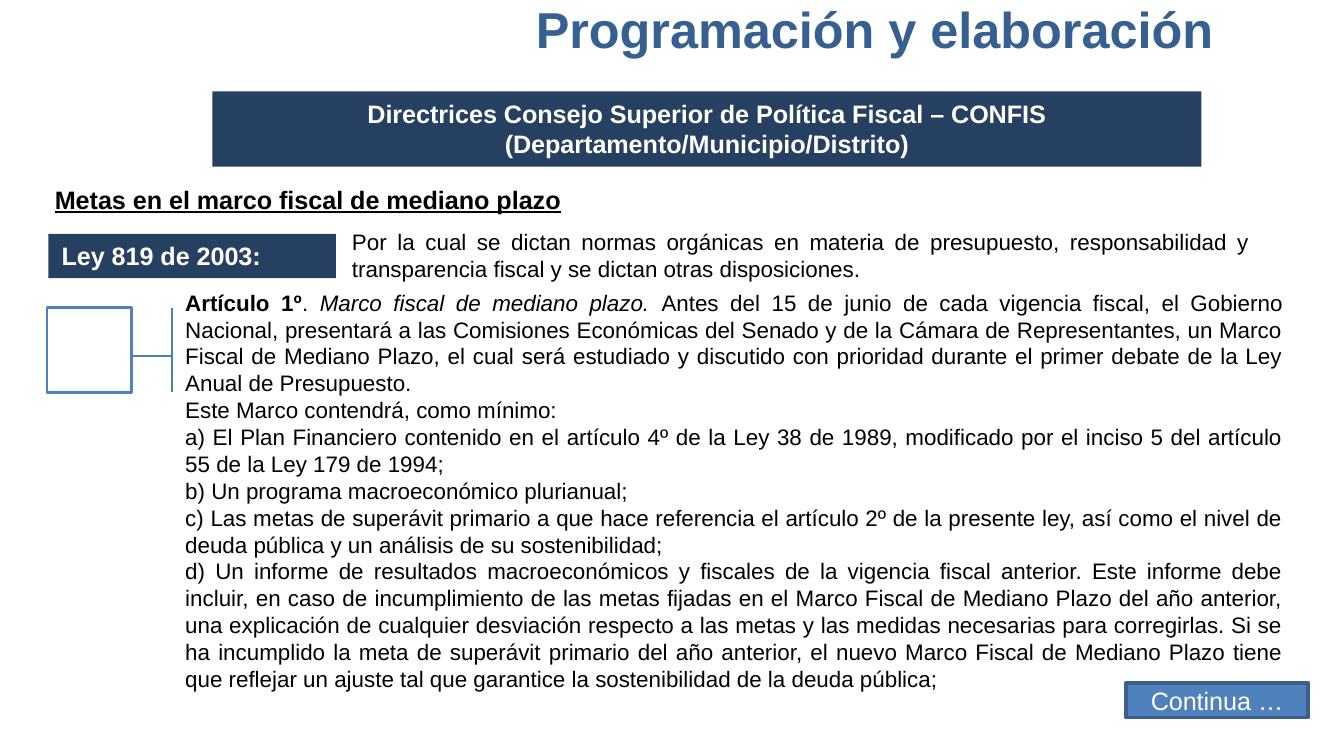
import pptx
import pptx.dml.color
import pptx.enum.shapes
import pptx.enum.text
import pptx.util
from lxml import etree

COLUMNS, ROWS = 100, 56.25
CELLS_PER_INCH = 10
FONT = "Arial"
NAVY, BLUE, WHITE, BLACK = "254061", "4F81BD", "FFFFFF", "000000"
HEADING_SIZE, BODY_SIZE = 13.5, 12
ALIGN = pptx.enum.text.PP_ALIGN
ANCHOR = pptx.enum.text.MSO_ANCHOR
FIT = pptx.enum.text.MSO_AUTO_SIZE

ARTICLE_OPENING = [
    ("Artículo 1º", {"bold": True}),
    (". ", {}),
    ("Marco fiscal de mediano plazo. ", {"italic": True}),
    ("Antes del 15 de junio de cada vigencia fiscal, el Gobierno Nacional, presentará a las "
     "Comisiones Económicas del Senado y de la Cámara de Representantes, un Marco Fiscal de "
     "Mediano Plazo, el cual será estudiado y discutido con prioridad durante el primer debate "
     "de la Ley Anual de Presupuesto.", {}),
]
ARTICLE_CONTENTS = [
    "Este Marco contendrá, como mínimo:",
    "a) El Plan Financiero contenido en el artículo 4º de la Ley 38 de 1989, modificado por el "
    "inciso 5 del artículo 55 de la Ley 179 de 1994;",
    "b) Un programa macroeconómico plurianual;",
    "c) Las metas de superávit primario a que hace referencia el artículo 2º de la presente ley, "
    "así como el nivel de deuda pública y un análisis de su sostenibilidad;",
    "d) Un informe de resultados macroeconómicos y fiscales de la vigencia fiscal anterior. Este "
    "informe debe incluir, en caso de incumplimiento de las metas fijadas en el Marco Fiscal de "
    "Mediano Plazo del año anterior, una explicación de cualquier desviación respecto a las metas "
    "y las medidas necesarias para corregirlas. Si se ha incumplido la meta de superávit primario "
    "del año anterior, el nuevo Marco Fiscal de Mediano Plazo tiene que reflejar un ajuste tal que "
    "garantice la sostenibilidad de la deuda pública;",
]


def cells(*counts):
    """Turn counts of grid cells into lengths."""
    return [pptx.util.Inches(count / CELLS_PER_INCH) for count in counts]


def color(value):
    """Turn a hex string into a colour."""
    return pptx.dml.color.RGBColor.from_string(value)


def format_text(box, size, ink, align, bold=False, underline=False, anchor=ANCHOR.TOP, fit=FIT.NONE):
    """Format every paragraph and run of a box."""
    frame = box.text_frame
    frame.word_wrap = True
    frame.auto_size = fit
    frame.vertical_anchor = anchor
    for para in frame.paragraphs:
        para.alignment = align
        for span in para.runs:
            span.font.name = FONT
            span.font.size = pptx.util.Pt(size)
            span.font.color.rgb = color(ink)
            span.font.bold = bold
            span.font.underline = underline


def add_text(page, place, text, size, align, **style):
    """Add a black text box that grows with its text."""
    box = page.shapes.add_textbox(*cells(*place))
    box.text_frame.text = text
    format_text(box, size, BLACK, align, fit=FIT.SHAPE_TO_FIT_TEXT, **style)


def add_panel(page, place, fill=None, line=None, weight=0):
    """Add a flat rectangle with an optional fill and outline."""
    panel = page.shapes.add_shape(pptx.enum.shapes.MSO_SHAPE.RECTANGLE, *cells(*place))
    panel.shadow.inherit = False
    if fill:
        panel.fill.solid()
        panel.fill.fore_color.rgb = color(fill)
    else:
        panel.fill.background()
    if line:
        panel.line.color.rgb = color(line)
        panel.line.width = pptx.util.Pt(weight)
    else:
        panel.line.fill.background()
    return panel


def add_label(page, place, text, align, fill=NAVY, line=None, weight=0, **style):
    """Add a filled rectangle with white text."""
    panel = add_panel(page, place, fill, line, weight)
    panel.text_frame.text = text
    format_text(panel, HEADING_SIZE, WHITE, align, **style)


def add_line(page, ends):
    """Add a thin straight line without a shadow."""
    line = page.shapes.add_connector(pptx.enum.shapes.MSO_CONNECTOR.STRAIGHT, *cells(*ends))
    line.line.color.rgb = color("4B7EBC")
    line.line.width = pptx.util.Pt(0.75)
    etree.SubElement(line._element.spPr, pptx.oxml.ns.qn("a:effectLst"))


def set_title(page, place, text):
    """Move, fill and format the title placeholder."""
    title = page.shapes.title
    title.left, title.top, title.width, title.height = cells(*place)
    title.text_frame.text = text
    format_text(title, 27, "376092", ALIGN.RIGHT, bold=True, anchor=ANCHOR.MIDDLE)


def add_bracket(page):
    """Add the square and the two lines that tie it to the article."""
    left, top, side, bar = 3.5, 22.9, 6.3, 12.8
    add_panel(page, (left, top, side, side), line=BLUE, weight=1.5)
    add_line(page, (bar, top, bar, top + side))
    add_line(page, (bar, 26.5, left + side, 26.5))


def add_article(page):
    """Add the article with its emphasised opening."""
    box = page.shapes.add_textbox(*cells(12.8, 21, 83.7, 31.3))
    opening = box.text_frame.paragraphs[0]
    for text, _ in ARTICLE_OPENING:
        opening.add_run().text = text
    for text in ARTICLE_CONTENTS:
        box.text_frame.add_paragraph().text = text
    format_text(box, BODY_SIZE, BLACK, ALIGN.JUSTIFY, fit=FIT.SHAPE_TO_FIT_TEXT)
    for span, (_, emphasis) in zip(opening.runs, ARTICLE_OPENING):
        span.font.bold = emphasis.get("bold", False)
        span.font.italic = emphasis.get("italic", False)


def main():
    """Build the slide and save the deck."""
    deck = pptx.Presentation()
    deck.slide_width, deck.slide_height = cells(COLUMNS, ROWS)
    page = deck.slides.add_slide(deck.slide_layouts.get_by_name("Title Only"))
    set_title(page, (37.5, -0.5, 53.8, 5.2), "Programación y elaboración")
    add_label(page, (15.8, 6.8, 73.6, 5.6),
              "Directrices Consejo Superior de Política Fiscal – CONFIS (Departamento/Municipio/Distrito)",
              ALIGN.CENTER, bold=True, fit=FIT.SHAPE_TO_FIT_TEXT)
    add_text(page, (3.1, 13.2, 44.1, 3.3), "Metas en el marco fiscal de mediano plazo",
             HEADING_SIZE, ALIGN.LEFT, bold=True, underline=True)
    add_label(page, (3.6, 17.4, 21.4, 3.3), "Ley 819 de 2003:", ALIGN.JUSTIFY,
              bold=True, fit=FIT.SHAPE_TO_FIT_TEXT)
    add_bracket(page)
    add_article(page)
    add_label(page, (83.8, 50.8, 13.5, 2.6), "Continua …", ALIGN.CENTER,
              fill=BLUE, line="3A5F8C", weight=2, anchor=ANCHOR.MIDDLE)
    add_text(page, (25.2, 16.5, 68.8, 5),
             "Por la cual se dictan normas orgánicas en materia de presupuesto, responsabilidad y "
             "transparencia fiscal y se dictan otras disposiciones.", BODY_SIZE, ALIGN.JUSTIFY)
    deck.save("out.pptx")


if __name__ == "__main__":
    main()
